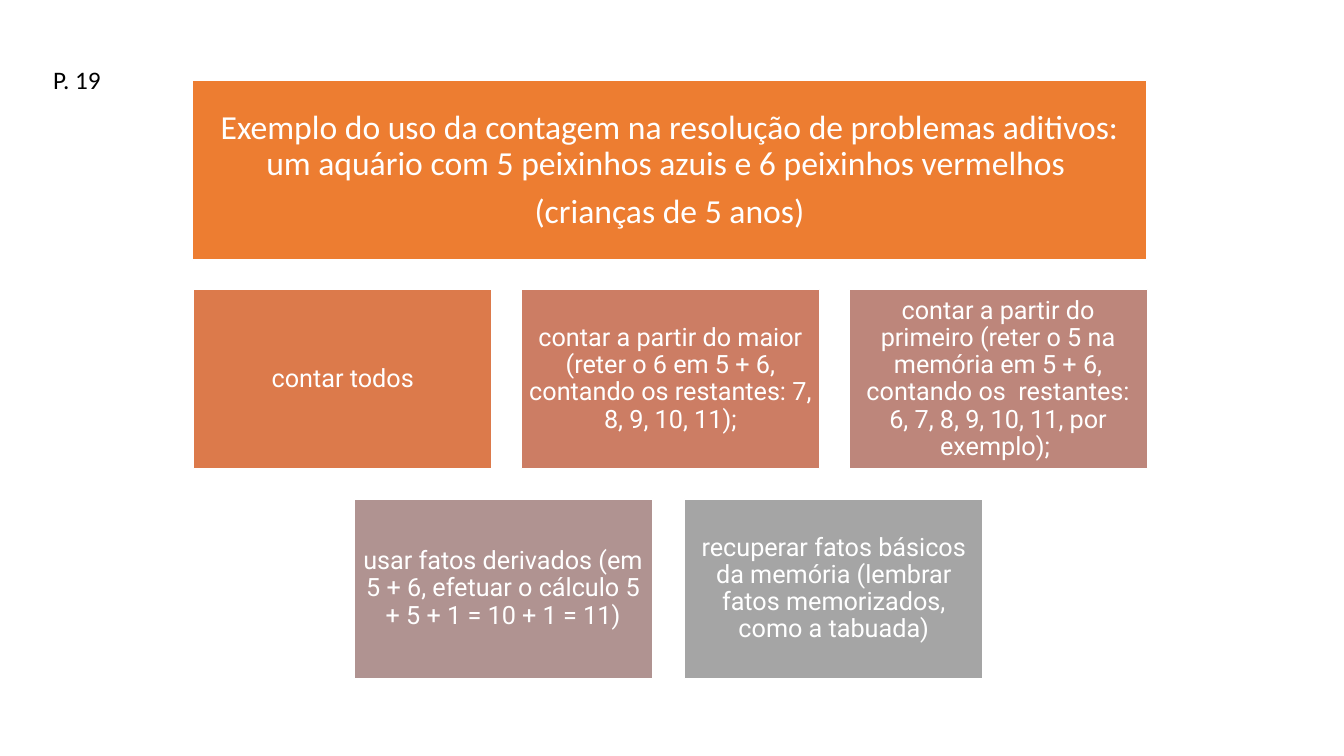
from pptx import Presentation
from pptx.dml.color import RGBColor
from pptx.enum.shapes import MSO_SHAPE
from pptx.enum.text import MSO_ANCHOR, MSO_AUTO_SIZE, PP_ALIGN
from pptx.util import Emu, Pt

RECTANGLE = MSO_SHAPE.RECTANGLE
MIDDLE, TOP = MSO_ANCHOR.MIDDLE, MSO_ANCHOR.TOP
NO_FIT = MSO_AUTO_SIZE.NONE
CENTER, LEFT = PP_ALIGN.CENTER, PP_ALIGN.LEFT
EMU_PER_PX = 9144
TITLE_ONLY = 5
COLORS = {
    "white": "FFFFFF",
    "black": "000000",
    "heading": "ED7D31",
    "all": "DC7A4B",
    "larger": "CC7D64",
    "first": "BD867B",
    "derived": "B09391",
    "recall": "A5A5A5",
}


def px(length):
    """Turn px into EMU."""
    return Emu(length * EMU_PER_PX)


class CountingSlide:
    """Hold the slide and the style shared by its blocks."""

    heading_font = "Calibri"
    strategy_font = "Roboto"
    heading_size = 24
    body_size = 18
    line_spacing = 0.9
    after_ratio = 0.35

    def __init__(self, presentation):
        """Add an empty slide with a title."""
        self.slide = presentation.slides.add_slide(presentation.slide_layouts[TITLE_ONLY])

    def color(self, name):
        """Look up a colour by its name."""
        return RGBColor.from_string(COLORS[name])

    def add_paragraphs(self, frame, texts, font, size, color, align):
        """Set each text as one paragraph."""
        for index, text in enumerate(texts):
            paragraph = frame.add_paragraph() if index else frame.paragraphs[0]
            paragraph.alignment = align
            run = paragraph.add_run()
            run.text = text
            run.font.name = font
            run.font.size = Pt(size)
            run.font.color.rgb = self.color(color)

    def fill_block(self, block, fill, texts, font, size, inset):
        """Colour a block and centre its text."""
        block.fill.solid()
        block.fill.fore_color.rgb = self.color(fill)
        block.line.color.rgb = self.color("white")
        block.line.width = Pt(1)
        frame = block.text_frame
        frame.word_wrap = True
        frame.auto_size = NO_FIT
        frame.vertical_anchor = MIDDLE
        frame.margin_left = frame.margin_right = px(inset)
        frame.margin_top = frame.margin_bottom = px(inset)
        self.add_paragraphs(frame, texts, font, size, "white", CENTER)
        for paragraph in frame.paragraphs:
            paragraph.line_spacing = self.line_spacing
            paragraph.space_after = Pt(size * self.after_ratio)

    def heading(self, left, top, width, height, texts):
        """Place the title as the wide top block."""
        title = self.slide.shapes.title
        title.left, title.top = px(left), px(top)
        title.width, title.height = px(width), px(height)
        self.fill_block(title, "heading", texts, self.heading_font, self.heading_size, 10)

    def strategy(self, left, top, width, height, fill, text):
        """Add one strategy block."""
        block = self.slide.shapes.add_shape(RECTANGLE, px(left), px(top), px(width), px(height))
        block.shadow.inherit = False
        self.fill_block(block, fill, [text], self.strategy_font, self.body_size, 7)

    def page_label(self, left, top, width, height, text):
        """Add the page reference."""
        label = self.slide.shapes.add_textbox(px(left), px(top), px(width), px(height))
        label.text_frame.word_wrap = True
        label.text_frame.vertical_anchor = TOP
        self.add_paragraphs(label.text_frame, [text], self.heading_font, self.body_size, "black", LEFT)


def main():
    """Build and save the slide."""
    presentation = Presentation()
    presentation.slide_width, presentation.slide_height = px(1333), px(750)
    page = CountingSlide(presentation)
    block_width, block_height = 296, 178

    page.heading(191, 80, 946, block_height, [
        "Exemplo do uso da contagem na resolução de problemas aditivos: "
        "um aquário com 5 peixinhos azuis e 6 peixinhos vermelhos ",
        "(crianças de 5 anos)",
    ])

    strategy_rows = [
        (192, 287, 325, [
            ("all", "contar todos"),
            ("larger", "contar a partir do maior (reter o 6 em 5 + 6, "
                       "contando os restantes: 7, 8, 9, 10, 11);"),
            ("first", "contar a partir do primeiro (reter o 5 na memória em 5 + 6, "
                      "contando os  restantes: 6, 7, 8, 9, 10, 11, por exemplo); "),
        ]),
        (351, 495, 328, [
            ("derived", "usar fatos derivados (em 5 + 6, efetuar o cálculo "
                        "5 + 5 + 1 = 10 + 1 = 11)"),
            ("recall", "recuperar fatos básicos da memória "
                       "(lembrar fatos memorizados, como a tabuada)"),
        ]),
    ]
    for left, top, pitch, strategies in strategy_rows:
        for column, (fill, text) in enumerate(strategies):
            page.strategy(left + column * pitch, top, block_width, block_height, fill, text)

    page.page_label(43, 59, 94, 40, "P. 19")
    presentation.save("out.pptx")


if __name__ == "__main__":
    main()
